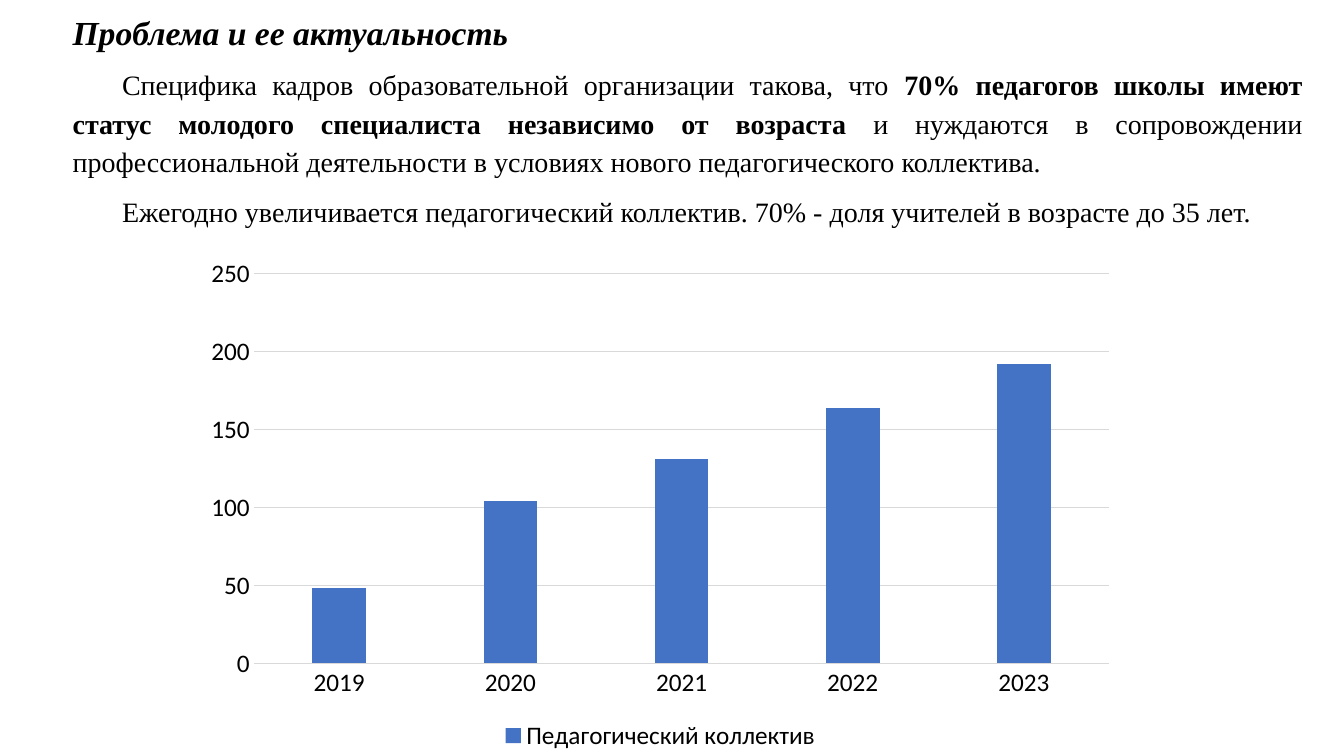
from pptx import Presentation
from pptx.chart.data import CategoryChartData
from pptx.dml.color import RGBColor
from pptx.enum.chart import XL_CHART_TYPE, XL_LEGEND_POSITION, XL_TICK_MARK
from pptx.enum.text import MSO_ANCHOR, MSO_AUTO_SIZE, PP_ALIGN
from pptx.oxml.ns import qn
from pptx.util import Inches, Pt

# Content
HEADING = "Проблема и ее актуальность"
PARAGRAPHS = [
    [("Специфика кадров образовательной организации такова, что ", False),
     ("70% педагогов школы имеют статус молодого специалиста независимо от возраста", True),
     (" и нуждаются в сопровождении профессиональной деятельности "
      "в условиях нового педагогического коллектива.", False)],
    [("Ежегодно увеличивается педагогический коллектив. "
      "70% - доля учителей в возрасте до 35 лет.", False)],
]
SERIES_NAME = "Педагогический коллектив"
STAFF = {"2019": 48, "2020": 104, "2021": 131, "2022": 164, "2023": 192}

# Layout in inches
WIDTH, HEIGHT = 13.33, 7.5
TEXT_LEFT, TEXT_WIDTH = 0.62, 12.4
TITLE_TOP, TITLE_HEIGHT = 0.01, 0.56
BODY_TOP = TITLE_TOP + TITLE_HEIGHT
CHART_LEFT, CHART_TOP, CHART_WIDTH = 1.91, 2.46, 9.28
BLACK, GRID, BAR = "000000", "D9D9D9", "4472C4"


def color(value):
    return RGBColor.from_string(value)


def place(shape, left, top, width, height):
    shape.left, shape.top = Inches(left), Inches(top)
    shape.width, shape.height = Inches(width), Inches(height)
    frame = shape.text_frame
    frame.word_wrap = True
    frame.auto_size = MSO_AUTO_SIZE.NONE
    frame.vertical_anchor = MSO_ANCHOR.TOP
    return frame


def write(paragraph, runs, size, indent=0, italic=False):
    properties = paragraph._p.get_or_add_pPr()
    properties.set("marL", "0")
    properties.set("indent", str(Inches(indent)))
    properties.get_or_change_to_buNone() if hasattr(
        properties, "get_or_change_to_buNone") else properties.append(
        properties.makeelement(qn("a:buNone"), {}))
    paragraph.alignment = PP_ALIGN.JUSTIFY
    paragraph.line_spacing = 1.15
    paragraph.space_before, paragraph.space_after = Pt(0), Pt(8)
    for text, bold in runs:
        run = paragraph.add_run()
        run.text = text
        style(run.font, size, "Times New Roman")
        run.font.bold, run.font.italic = bold, italic


def style(font, size, name="Calibri"):
    font.size, font.name = Pt(size), name
    font.color.rgb = color(BLACK)


def line(target, value):
    target.format.line.color.rgb = color(value)
    target.format.line.width = Pt(0.75)


presentation = Presentation()
presentation.slide_width, presentation.slide_height = Inches(WIDTH), Inches(HEIGHT)
slide = presentation.slides.add_slide(presentation.slide_layouts[1])

# Heading and text
title = place(slide.shapes.title, TEXT_LEFT, TITLE_TOP, TEXT_WIDTH, TITLE_HEIGHT)
write(title.paragraphs[0], [(HEADING, True)], 24, italic=True)
body = place(slide.placeholders[1], TEXT_LEFT, BODY_TOP, TEXT_WIDTH, 1.75)
for index, runs in enumerate(PARAGRAPHS):
    paragraph = body.add_paragraph() if index else body.paragraphs[0]
    write(paragraph, runs, 20, indent=0.49)

# Staff chart
data = CategoryChartData()
data.categories = list(STAFF)
data.add_series(SERIES_NAME, list(STAFF.values()))
chart = slide.shapes.add_chart(
    XL_CHART_TYPE.COLUMN_CLUSTERED, Inches(CHART_LEFT), Inches(CHART_TOP),
    Inches(CHART_WIDTH), Inches(HEIGHT - CHART_TOP), data).chart
chart.has_title = False
style(chart.font, 10)
chart.has_legend = True
chart.legend.position = XL_LEGEND_POSITION.BOTTOM
chart.legend.include_in_layout = False
style(chart.legend.font, 18)

plot = chart.plots[0]
plot.gap_width, plot.overlap = 219, -27
plot.vary_by_categories = False
fill = plot.series[0].format.fill
fill.solid()
fill.fore_color.rgb = color(BAR)

for axis in (chart.category_axis, chart.value_axis):
    axis.major_tick_mark = axis.minor_tick_mark = XL_TICK_MARK.NONE
    style(axis.tick_labels.font, 18)
line(chart.category_axis, GRID)
chart.value_axis.format.line.fill.background()
chart.value_axis.minimum_scale, chart.value_axis.maximum_scale = 0, 250
chart.value_axis.major_unit = 50
line(chart.value_axis.major_gridlines, GRID)

presentation.save("out.pptx")
